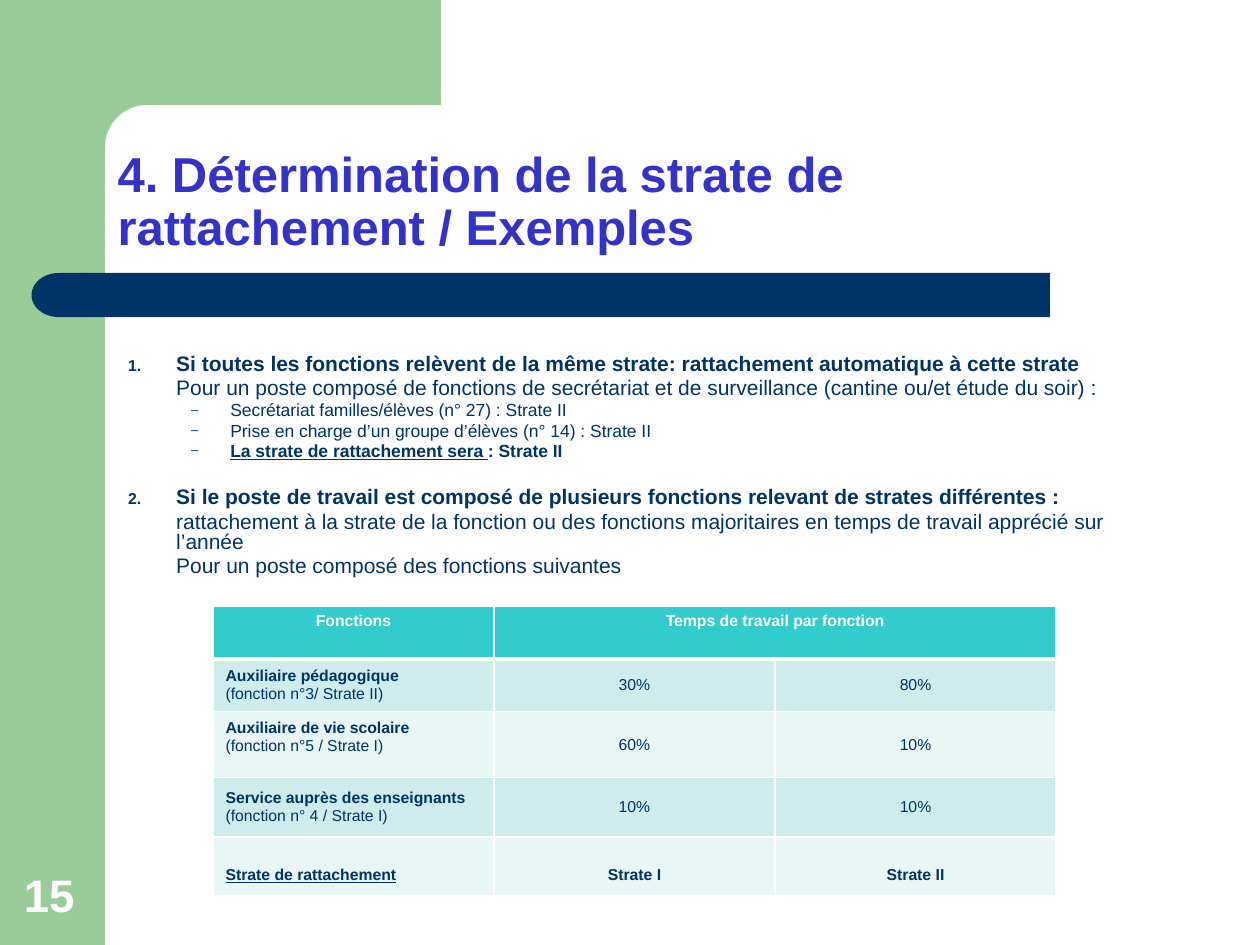
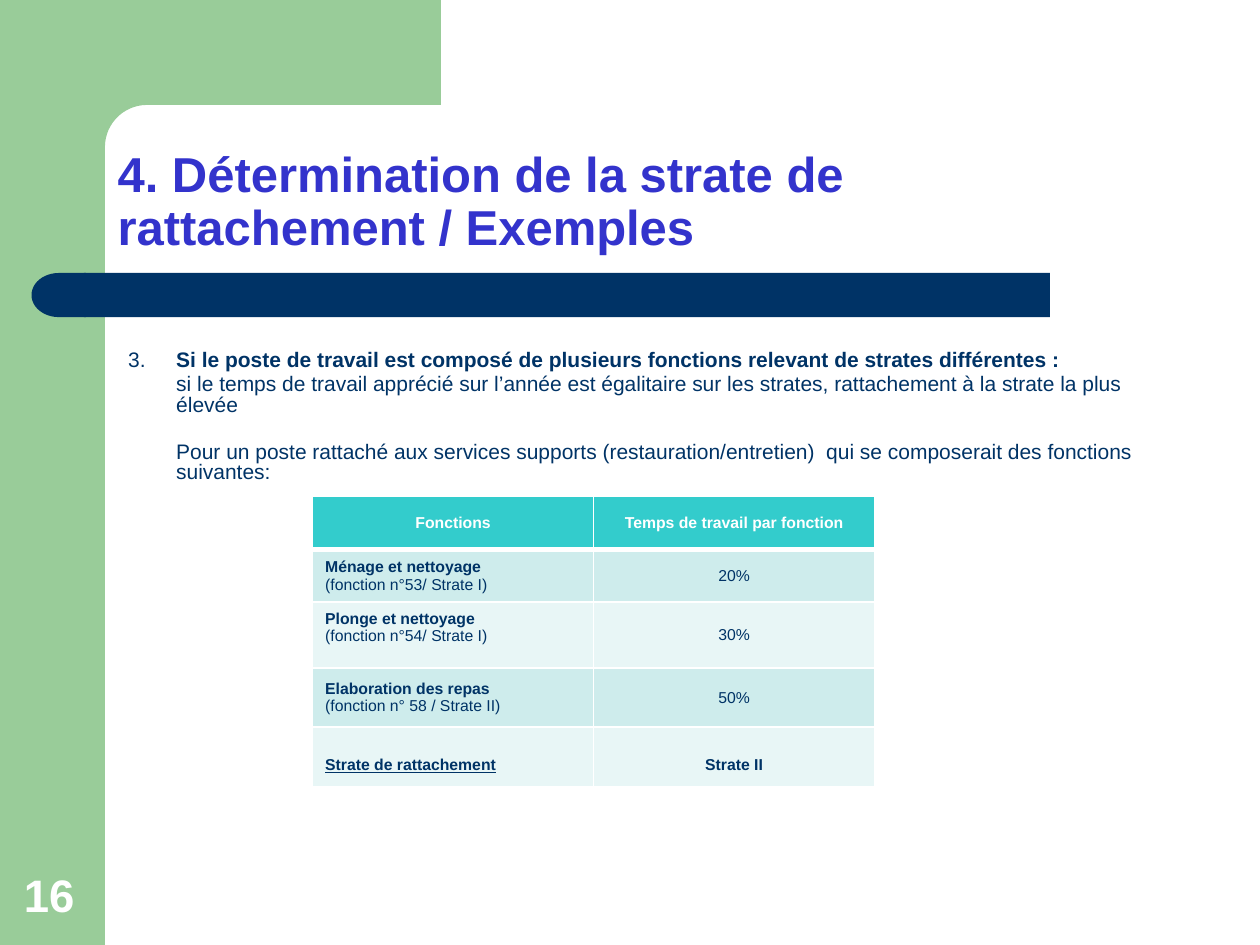
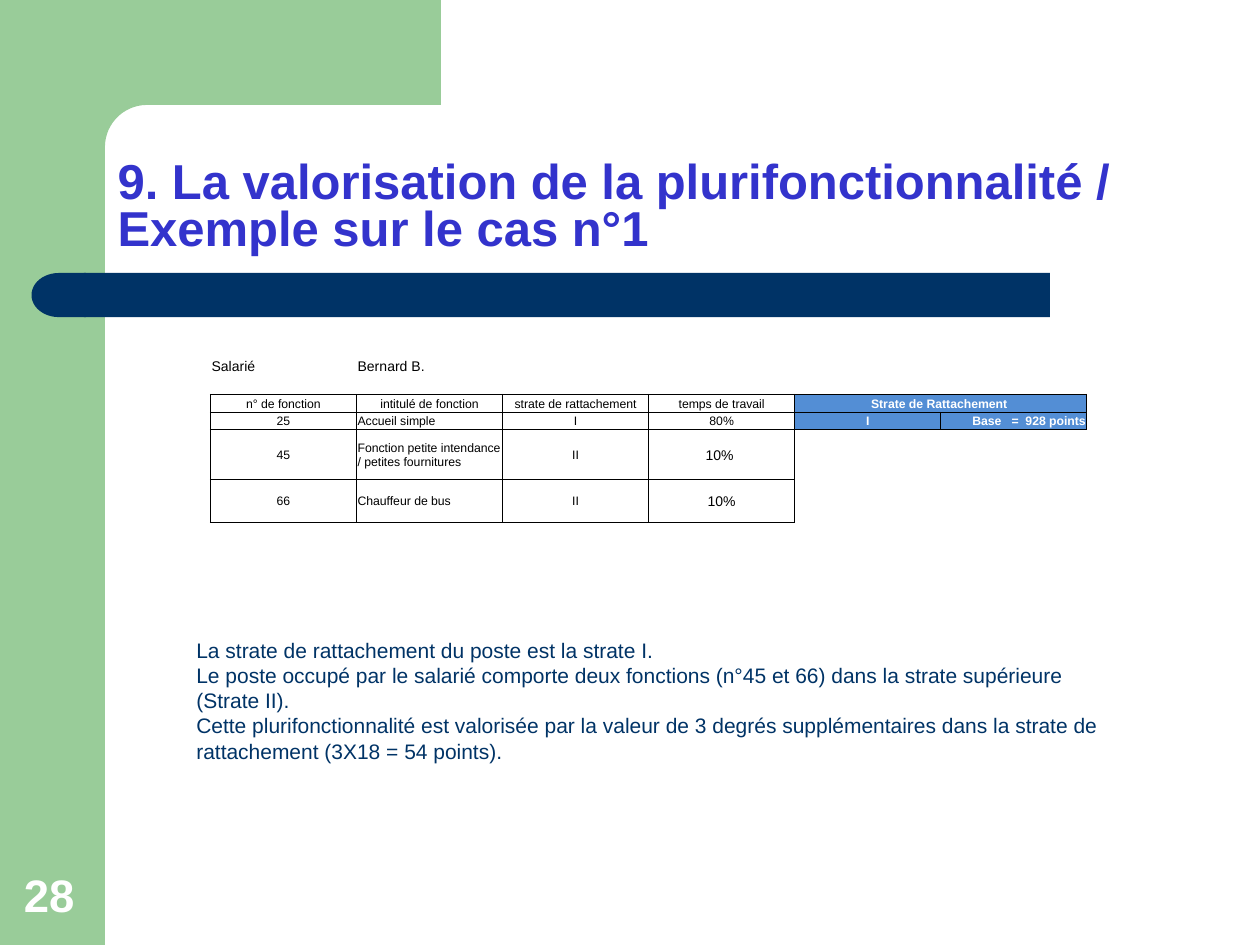
import math

import lxml.etree
import pptx
import pptx.dml.color
import pptx.enum.shapes
import pptx.enum.text
import pptx.oxml.ns
import pptx.util

Pt = pptx.util.Pt
RGBColor = pptx.dml.color.RGBColor
SHAPE = pptx.enum.shapes.MSO_SHAPE
ANCHOR = pptx.enum.text.MSO_ANCHOR
ALIGN = pptx.enum.text.PP_ALIGN
qn = pptx.oxml.ns.qn

FONT = "Arial"
GREEN = RGBColor(0x99, 0xCC, 0x99)
NAVY = RGBColor(0x00, 0x33, 0x66)
TITLE_BLUE = RGBColor(0x33, 0x33, 0xCC)
TURQUOISE = RGBColor(0x33, 0xCC, 0xCC)
BAND_DARK = RGBColor(0xCE, 0xEC, 0xEC)
BAND_LIGHT = RGBColor(0xE8, 0xF6, 0xF6)
SKY = RGBColor(0x53, 0x8E, 0xD5)
WHITE = RGBColor(0xFF, 0xFF, 0xFF)
BLACK = RGBColor(0, 0, 0)

STRATE_TITLE = "4. Détermination de la strate de rattachement / Exemples"
MIXED_STRATES = "Si le poste de travail est composé de plusieurs fonctions relevant de strates différentes :"
SECTION_GAP = 15.8

INDENTS = {"rule": (27.4, -27.4, 12), "text": (27.4, 0, 12), "item": (58.3, -22.3, 10)}

EXAMPLES = [
    {
        "number": "15",
        "body": (66.2, 185.8, 605.5, 293),
        "body_inset": 17.3,
        "rules": [
            ("rule", [("Si toutes les fonctions relèvent de la même strate: rattachement automatique à cette strate", "b")], 2.4, 1),
            ("text", [("Pour un poste composé de fonctions de secrétariat et de surveillance (cantine ou/et étude du soir) :", "")], 2.4, None),
            ("item", [("Secrétariat familles/élèves (n° 27) : Strate II", "")], 2, "–"),
            ("item", [("Prise en charge d’un groupe d’élèves (n° 14) : Strate II", "")], 2, "–"),
            ("item", [("La strate de rattachement sera ", "bu"), (": Strate II", "b")], 2, "–"),
            ("rule", [(MIXED_STRATES, "b")], SECTION_GAP, 2),
            ("text", [("rattachement à la strate de la fonction ou des fonctions majoritaires en temps de travail apprécié sur l’année", "")], 2.4, None),
            ("text", [("Pour un poste composé des fonctions suivantes", "")], 2.4, None),
        ],
        "table_at": (121.7, 346.3),
        "header_anchor": ANCHOR.TOP,
        "functions": [
            ["Fonctions", "Temps de travail par fonction", None],
            ["Auxiliaire pédagogique\n(fonction n°3/ Strate II)", "30%", "80%"],
            ["Auxiliaire de vie scolaire\n(fonction n°5 / Strate I)", "60%", "10%"],
            ["Service auprès des enseignants\n(fonction n° 4 / Strate I)", "10%", "10%"],
            ["Strate de rattachement", "Strate I", "Strate II"],
        ],
    },
    {
        "number": "16",
        "body": (66.2, 185.8, 605.5, 78.5),
        "body_inset": 15,
        "rules": [
            ("rule", [("3.\t", ""), (MIXED_STRATES, "b")], 2.4, None),
            ("text", [("si le temps de travail apprécié sur l’année est égalitaire sur les strates, rattachement à la strate la plus élevée", "")], 2.4, None),
            ("text", [("Pour un poste rattaché aux services supports (restauration/entretien)  qui se composerait des fonctions suivantes:", "")], SECTION_GAP, None),
        ],
        "table_at": (178.6, 283.7),
        "header_anchor": ANCHOR.MIDDLE,
        "functions": [
            ["Fonctions", "Temps de travail par fonction"],
            ["Ménage et nettoyage\n(fonction n°53/ Strate I)", "20%"],
            ["Plonge et nettoyage\n(fonction n°54/ Strate I)", "30%"],
            ["Elaboration des repas\n(fonction n° 58 / Strate II)", "50%"],
            ["Strate de rattachement", "Strate II"],
        ],
    },
]
FUNCTION_ROWS = [30.2, 30.2, 37, 33.8, 33.8]
FUNCTION_COLUMN = 160.6

CASE_TITLE = "9. La valorisation de la plurifonctionnalité / Exemple sur le cas n°1"
CASE_ROWS = [11.5, 11.5, 10.3, 10.1, 28.6, 24.2, 16.6, 11.5]
CASE_COLUMN = 83.5
CASE = [
    ["Salarié", "Bernard B.", "", "", "", ""],
    [""] * 6,
    ["n° de fonction", "intitulé de fonction", "strate de rattachement", "temps de travail", "Strate de Rattachement ", None],
    ["25", "Accueil simple", "I", "80%", "I", "Base   =  928 points"],
    ["45", "Fonction petite intendance / petites fournitures", "II", "10% ", "", ""],
    ["66", "Chauffeur de bus", "II", "10%", "", ""],
    [""] * 6,
    [""] * 6,
]
CONCLUSIONS = [
    "La strate de rattachement du poste est la strate I.",
    "Le poste occupé par le salarié comporte deux fonctions (n°45 et 66) dans la strate supérieure \n(Strate II).",
    "Cette plurifonctionnalité est valorisée par la valeur de 3 degrés supplémentaires dans la strate de rattachement (3X18 = 54 points).",
]


def style_runs(paragraph, size, color, marks=""):
    for run in paragraph.runs:
        run.font.name = FONT
        run.font.size = Pt(size)
        run.font.color.rgb = color
        run.font.bold = "b" in marks
        run.font.underline = "u" in marks


def paint(shape, color):
    shape.shadow.inherit = False
    shape.fill.solid()
    shape.fill.fore_color.rgb = color
    shape.line.fill.background()


def decorate_layout(slide, layout):
    side = slide.shapes.add_shape(SHAPE.RECTANGLE, 0, 0, Pt(60), Pt(540))
    corner = [
        (84 + 24 * math.cos(math.radians(a)), 84 - 24 * math.sin(math.radians(a)))
        for a in range(90, 181, 6)
    ]
    outline = slide.shapes.build_freeform(Pt(252), 0, scale=1.0)
    edge = [(252, 60), *corner, (60, 92), (36, 92), (36, 0)]
    outline.add_line_segments([(Pt(x), Pt(y)) for x, y in edge], close=True)
    top = outline.convert_to_shape()
    bar = slide.shapes.add_shape(SHAPE.RECTANGLE, Pt(48), Pt(156), Pt(552), Pt(25.2))
    cap = slide.shapes.add_shape(SHAPE.FLOWCHART_DELAY, Pt(18), Pt(156), Pt(31), Pt(25.2))
    cap.rotation = 180
    for number, (shape, color) in enumerate([(side, GREEN), (top, GREEN), (bar, NAVY), (cap, NAVY)], 20):
        paint(shape, color)
        shape.element.nvSpPr.cNvPr.set("id", str(number))
        layout.shapes.element.append(shape.element)


def add_text_frame(slide, box):
    frame = slide.shapes.add_textbox(*map(Pt, box)).text_frame
    frame.word_wrap = True
    return frame


def fill_frame(slide, title, number, top=60, spacing=0.9):
    heading = slide.shapes.title
    heading.left, heading.top, heading.width, heading.height = map(Pt, (60, top, 624, 150 - top))
    frame = heading.text_frame
    frame.text = title
    frame.word_wrap = True
    frame.auto_size = pptx.enum.text.MSO_AUTO_SIZE.NONE
    frame.vertical_anchor = ANCHOR.BOTTOM
    frame.paragraphs[0].alignment = ALIGN.LEFT
    frame.paragraphs[0].line_spacing = spacing
    style_runs(frame.paragraphs[0], 28, TITLE_BLUE, "b")

    page = add_text_frame(slide, (6.5, 491.8, 46, 38.2))
    page.text = number
    page.vertical_anchor = ANCHOR.BOTTOM
    style_runs(page.paragraphs[0], 26, WHITE, "b")


def set_bullet(properties, bullet):
    color = lxml.etree.SubElement(properties, qn("a:buClr"))
    lxml.etree.SubElement(color, qn("a:srgbClr"), val=str(NAVY))
    lxml.etree.SubElement(properties, qn("a:buSzPct"), val="75000")
    lxml.etree.SubElement(properties, qn("a:buFont"), typeface=FONT)
    if isinstance(bullet, int):
        lxml.etree.SubElement(properties, qn("a:buAutoNum"), type="arabicPeriod", startAt=str(bullet))
    else:
        lxml.etree.SubElement(properties, qn("a:buChar"), char=bullet)


def add_rules(slide, example):
    frame = add_text_frame(slide, example["body"])
    frame.margin_top = Pt(example["body_inset"])
    for index, (kind, segments, gap, bullet) in enumerate(example["rules"]):
        paragraph = frame.add_paragraph() if index else frame.paragraphs[0]
        left, hang, size = INDENTS[kind]
        for words, marks in segments:
            run = paragraph.add_run()
            run.text = words
            run.font.name = FONT
            run.font.size = Pt(size)
            run.font.color.rgb = NAVY
            run.font.bold = "b" in marks
            run.font.underline = "u" in marks
        paragraph.line_spacing = 0.8
        paragraph.space_before = Pt(gap if index else 0)
        properties = paragraph._p.get_or_add_pPr()
        properties.set("marL", str(Pt(left)))
        properties.set("indent", str(Pt(hang)))
        if bullet:
            set_bullet(properties, bullet)


def set_borders(cell, borders):
    properties = cell._tc.get_or_add_tcPr()
    for side, (color, width) in zip("LRTB", borders):
        line = lxml.etree.SubElement(properties, qn("a:ln" + side), w=str(Pt(width)))
        if color is None:
            lxml.etree.SubElement(line, qn("a:noFill"))
        else:
            solid = lxml.etree.SubElement(line, qn("a:solidFill"))
            lxml.etree.SubElement(solid, qn("a:srgbClr"), val=str(color))


def set_fill(cell, color):
    if color is None:
        cell.fill.background()
    else:
        cell.fill.solid()
        cell.fill.fore_color.rgb = color


def add_grid(slide, content, at, column_width, row_heights):
    columns = len(content[0])
    table = slide.shapes.add_table(
        len(content), columns, *map(Pt, at), Pt(column_width * columns), Pt(sum(row_heights))
    ).table
    table.first_row = table.horz_banding = False
    for column in table.columns:
        column.width = Pt(column_width)
    for row, height in zip(table.rows, row_heights):
        row.height = Pt(height)
    for r, texts in enumerate(content):
        for c, words in enumerate(texts):
            if words is None:
                table.cell(r, c - 1).merge(table.cell(r, c))
            else:
                table.cell(r, c).text = words
    return table


def add_functions(slide, example):
    content = example["functions"]
    last = len(content) - 1
    table = add_grid(slide, content, example["table_at"], FUNCTION_COLUMN, FUNCTION_ROWS)
    for r, texts in enumerate(content):
        for c in range(len(texts)):
            cell = table.cell(r, c)
            thin, thick = (WHITE, 1), (WHITE, 3)
            set_borders(cell, [thin, thin, thick if r == 1 else thin, thick if r == 0 else thin])
            set_fill(cell, TURQUOISE if r == 0 else BAND_DARK if r % 2 else BAND_LIGHT)
            cell.vertical_anchor = ANCHOR.MIDDLE if r else example["header_anchor"]
            if r == 2 and c == 0:
                cell.margin_bottom = Pt(12.4)
            if r == last:
                cell.margin_top = Pt(13.6)
            for line, paragraph in enumerate(cell.text_frame.paragraphs):
                bold = r in (0, last) or (c == 0 and line == 0)
                underlined = r == last and c == 0
                paragraph.alignment = ALIGN.CENTER if r == 0 or c else ALIGN.LEFT
                style_runs(paragraph, 9, NAVY if r else WHITE, "b" * bold + "u" * underlined)


def is_framed(r, c):
    return (2 <= r <= 5 and 0 <= c <= 3) or (2 <= r <= 3 and 4 <= c <= 5)


def case_alignment(r, c):
    if r < 2 or (c == 1 and r > 2):
        return ALIGN.LEFT
    return ALIGN.RIGHT if c == 5 else ALIGN.CENTER


def add_case(slide):
    table = add_grid(slide, CASE, (120.2, 202.3), CASE_COLUMN, CASE_ROWS)
    for r, texts in enumerate(CASE):
        for c, words in enumerate(texts):
            cell = table.cell(r, c)
            neighbours = [(r, c - 1), (r, c + 1), (r - 1, c), (r + 1, c)]
            set_borders(cell, [
                (BLACK if is_framed(r, c) or is_framed(*near) else None, 0.5) for near in neighbours
            ])
            highlighted = is_framed(r, c) and c >= 4
            set_fill(cell, SKY if highlighted else None)
            cell.margin_left = cell.margin_right = cell.margin_top = Pt(0.7)
            cell.margin_bottom = 0
            cell.vertical_anchor = ANCHOR.MIDDLE if r else ANCHOR.BOTTOM
            paragraph = cell.text_frame.paragraphs[0]
            if words:
                size = 8 if r == 0 or (c == 3 and r > 3) else 7
                paragraph.alignment = case_alignment(r, c)
                style_runs(paragraph, size, WHITE if highlighted else BLACK, "b" * highlighted)
            else:
                lxml.etree.SubElement(paragraph._p, qn("a:endParaRPr"), sz="700")


def add_conclusions(slide):
    frame = add_text_frame(slide, (105.1, 360.7, 555.8, 80))
    for index, words in enumerate(CONCLUSIONS):
        paragraph = frame.add_paragraph() if index else frame.paragraphs[0]
        paragraph.text = words
        style_runs(paragraph, 12, NAVY)


def main():
    deck = pptx.Presentation()
    deck.slide_width, deck.slide_height = Pt(720), Pt(540)
    layout = deck.slide_layouts[5]
    for index, example in enumerate(EXAMPLES):
        slide = deck.slides.add_slide(layout)
        if index == 0:
            decorate_layout(slide, layout)
        fill_frame(slide, STRATE_TITLE, example["number"])
        add_rules(slide, example)
        add_functions(slide, example)

    case_slide = deck.slides.add_slide(layout)
    fill_frame(case_slide, CASE_TITLE, "28", top=80, spacing=0.8)
    add_case(case_slide)
    add_conclusions(case_slide)
    deck.save("out.pptx")


if __name__ == "__main__":
    main()
